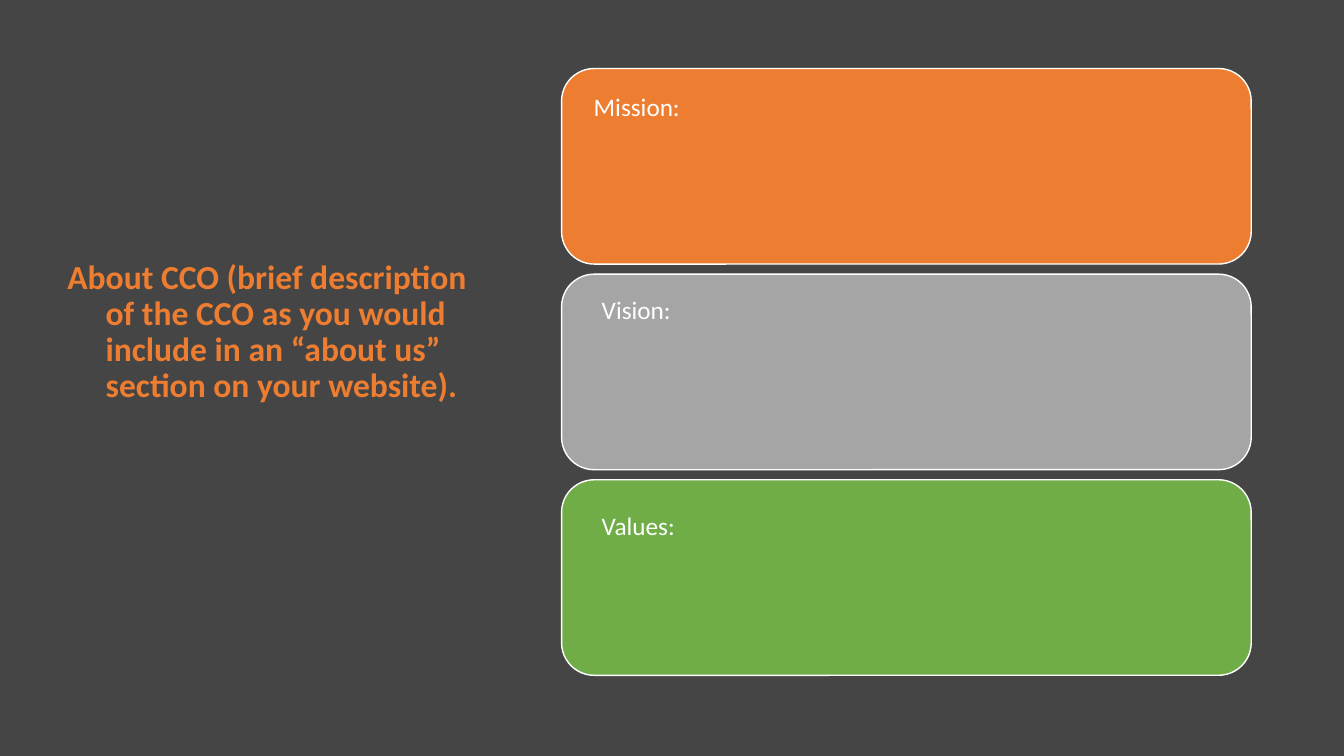
"""Build the About slide with mission, vision and values cards."""
from pptx import Presentation, util as u
from pptx.dml.color import RGBColor
from pptx.enum import shapes, text

HUES = {"back": "454545", "orange": "ED7D31", "gray": "A5A5A5",
        "green": "70AD47", "white": "FFFFFF"}
ABOUT = ("About CCO (brief description of the CCO as you would include "
         "in an “about us” section on your website).")
CARDS = [("Mission:", "orange", 0.22, 0.18),
         ("Vision:", "gray", 0.3, 0.15),
         ("Values:", "green", 0.3, 0.25)]
WIDE, HIGH = 13.33, 7.5
TOP, LEFT = 0.68, 5.57
CARD_W, CARD_H, STEP = 6.84, 1.94, 2.04
RIGHT = LEFT + CARD_W - 0.2


def hue(name):
    return RGBColor.from_string(HUES[name])


def box(slide, words, place, size, color, bold=False):
    frame = slide.shapes.add_textbox(*map(u.Inches, place)).text_frame
    frame.word_wrap = True
    frame.text = words
    font = frame.paragraphs[0].runs[0].font
    font.name, font.size, font.bold = "Calibri", u.Pt(size), bold
    font.color.rgb = hue(color)
    return frame


def card(slide, row, color):
    place = (LEFT, TOP + row * STEP, CARD_W, CARD_H)
    shape = slide.shapes.add_shape(
        shapes.MSO_SHAPE.ROUNDED_RECTANGLE, *map(u.Inches, place))
    shape.shadow.inherit = False
    shape.fill.solid()
    shape.fill.fore_color.rgb = hue(color)
    shape.line.color.rgb = hue("white")
    shape.line.width = u.Pt(1)


def main():
    deck = Presentation()
    deck.slide_width, deck.slide_height = u.Inches(WIDE), u.Inches(HIGH)
    slide = deck.slides.add_slide(deck.slide_layouts[6])
    slide.background.fill.solid()
    slide.background.fill.fore_color.rgb = hue("back")

    tall = 2 * STEP + CARD_H
    about = box(slide, ABOUT, (0.57, TOP, 4.16, tall), 24, "orange", True)
    about.vertical_anchor = text.MSO_ANCHOR.MIDDLE
    about.margin_bottom = u.Inches(0.83)
    para = about.paragraphs[0]
    para.line_spacing = 0.9
    props = para._p.get_or_add_pPr()
    props.set("marL", str(u.Inches(0.38)))
    props.set("indent", str(-u.Inches(0.38)))

    for row, (_, color, _, _) in enumerate(CARDS):
        card(slide, row, color)
    for row, (label, _, dx, dy) in enumerate(CARDS):
        x, y = LEFT + dx, TOP + row * STEP + dy
        frame = box(slide, label, (x, y, RIGHT - x, 0.4), 18, "white")
        frame.auto_size = text.MSO_AUTO_SIZE.SHAPE_TO_FIT_TEXT

    deck.save("out.pptx")


if __name__ == "__main__":
    main()
